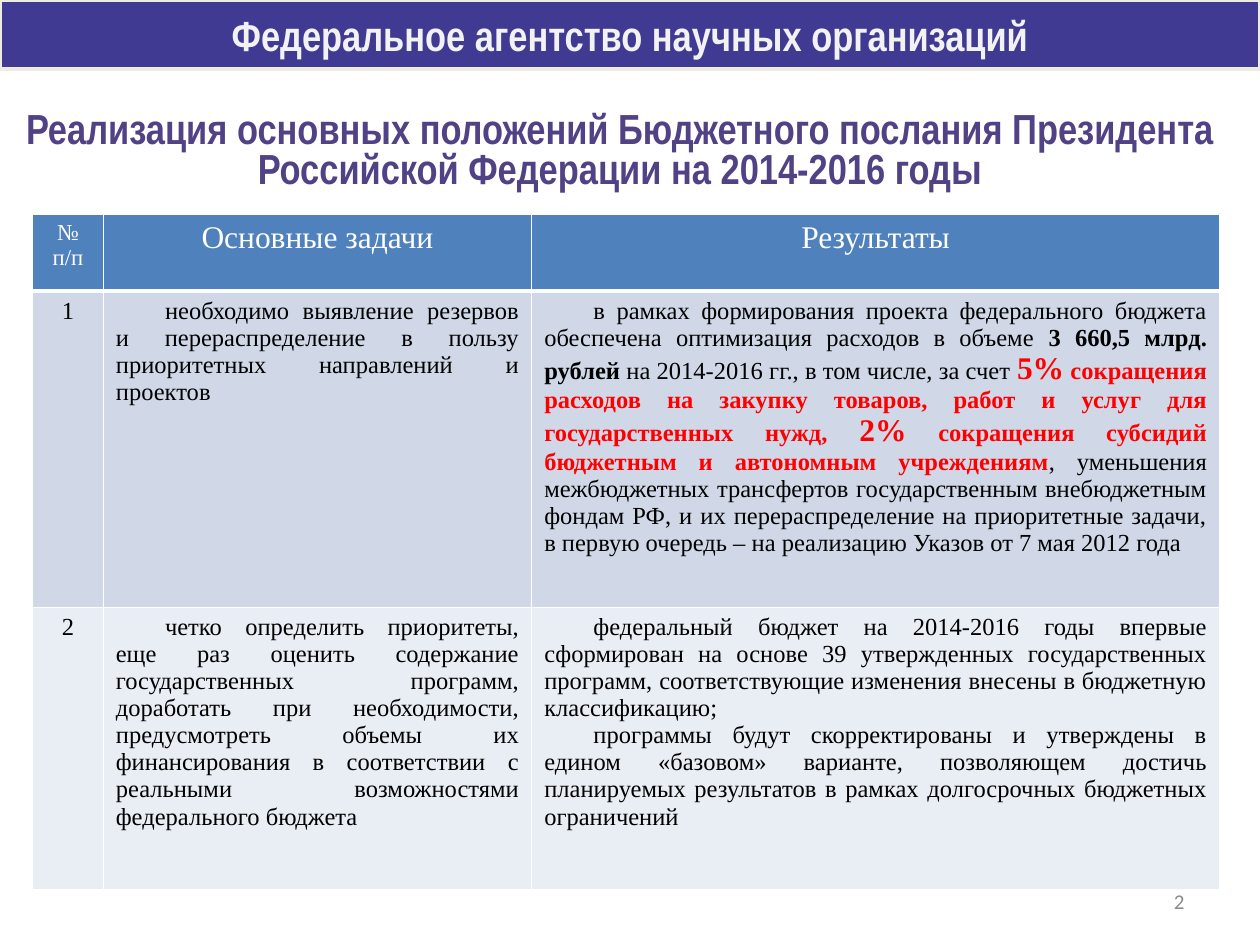
from dataclasses import dataclass
from typing import Optional

from lxml.etree import SubElement
from pptx import Presentation
from pptx.dml.color import RGBColor
from pptx.enum.shapes import MSO_SHAPE
from pptx.enum.text import MSO_ANCHOR, MSO_AUTO_SIZE, PP_ALIGN
from pptx.oxml.ns import qn
from pptx.util import Inches, Pt

SERIF = "Times New Roman"
NARROW = "Arial Narrow"


@dataclass
class Run:
    text: str
    size: float = 14
    color: str = "000000"
    bold: bool = False
    font: str = SERIF


@dataclass
class Cell:
    paragraphs: list
    align: PP_ALIGN = PP_ALIGN.JUSTIFY
    indent: float = 0.39


def rgb(value: str) -> RGBColor:
    return RGBColor.from_string(value)


def add_text(p, text: str, *, size: float, color: str, bold: bool = False,
             font: str = SERIF, align: Optional[PP_ALIGN] = None) -> None:
    r = p.add_run()
    r.text = text
    r.font.name = font
    r.font.size = Pt(size)
    r.font.bold = bold
    r.font.color.rgb = rgb(color)
    if align is not None:
        p.alignment = align


def place(sp, left: float, top: float, width: float, height: float) -> None:
    sp.left, sp.top = Inches(left), Inches(top)
    sp.width, sp.height = Inches(width), Inches(height)


def set_borders(cell, bottom: float) -> None:
    tc_pr = cell._tc.get_or_add_tcPr()
    for side, width in (("L", 1), ("R", 1), ("T", 1), ("B", bottom)):
        ln = SubElement(tc_pr, qn(f"a:ln{side}"), w=str(Pt(width)))
        fill = SubElement(ln, qn("a:solidFill"))
        SubElement(fill, qn("a:srgbClr"), val="FFFFFF")


def fill_cell(cell, content: Cell, fill: str, bottom: float) -> None:
    set_borders(cell, bottom)
    cell.fill.solid()
    cell.fill.fore_color.rgb = rgb(fill)
    tf = cell.text_frame
    for i, runs in enumerate(content.paragraphs):
        p = tf.add_paragraph() if i else tf.paragraphs[0]
        if content.indent:
            p_pr = p._p.get_or_add_pPr()
            p_pr.set("marL", "0")
            p_pr.set("indent", str(Inches(content.indent)))
        for run in runs:
            add_text(p, run.text, size=run.size, color=run.color,
                     bold=run.bold, font=run.font, align=content.align)


def centered(text: str, size: float = 14, color: str = "000000") -> Cell:
    return Cell([[Run(text, size, color)]], PP_ALIGN.CENTER, 0)


def body(*texts: str) -> Cell:
    return Cell([[Run(text)] for text in texts])


def red(text: str, size: float = 14) -> Run:
    return Run(text, size, "FF0000", True)


ROWS = [
    [centered("№ п/п", 13, "FFFFFF"),
     centered("Основные задачи", 18, "FFFFFF"),
     centered("Результаты", 18, "FFFFFF")],
    [centered("1"),
     body("необходимо выявление резервов и перераспределение в пользу "
          "приоритетных направлений и проектов"),
     Cell([[
         Run("в рамках формирования проекта федерального бюджета обеспечена "
             "оптимизация расходов в объеме "),
         Run("3 660,5 млрд. рублей ", bold=True),
         Run("на 2014-2016 гг., в том числе, за счет "),
         red("5%", 18),
         red(" сокращения расходов на закупку товаров, работ и услуг для "
             "государственных нужд, "),
         red("2%", 18),
         red(" сокращения субсидий бюджетным и автономным учреждениям"),
         Run(", уменьшения межбюджетных трансфертов государственным "
             "внебюджетным фондам РФ, и их перераспределение на приоритетные "
             "задачи, в первую очередь – на реализацию Указов от 7 мая 2012 года"),
     ]])],
    [centered("2"),
     body("четко определить приоритеты, еще раз оценить содержание "
          "государственных программ, доработать при необходимости, "
          "предусмотреть объемы их финансирования в соответствии с реальными "
          "возможностями федерального бюджета"),
     body("федеральный бюджет на 2014-2016 годы впервые сформирован на основе "
          "39 утвержденных государственных программ, соответствующие изменения "
          "внесены в бюджетную классификацию; ",
          "программы будут скорректированы и утверждены в едином «базовом» "
          "варианте, позволяющем достичь планируемых результатов в рамках "
          "долгосрочных бюджетных ограничений")],
]
ROW_FILLS = ["4F81BD", "D0D8E8", "E9EDF4"]
ROW_HEIGHTS = [0.61, 2.51, 2.24]
COL_WIDTHS = [0.56, 3.4, 5.46]


def add_banner(s) -> None:
    sp = s.shapes.add_shape(MSO_SHAPE.RECTANGLE, 0, 0, Inches(10), Inches(0.55))
    sp.shadow.inherit = False
    sp.fill.solid()
    sp.fill.fore_color.rgb = rgb("403A92")
    sp.line.color.rgb = rgb("EEECE1")
    sp.line.width = Pt(2.25)
    tf = sp.text_frame
    tf.word_wrap = False
    tf.vertical_anchor = MSO_ANCHOR.MIDDLE
    add_text(tf.paragraphs[0], "Федеральное агентство научных организаций",
             size=24, color="F2F2F2", bold=True, font=NARROW,
             align=PP_ALIGN.CENTER)


def add_title(s) -> None:
    sp = s.shapes.title
    place(sp, 0, 0.76, 9.84, 0.9)
    tf = sp.text_frame
    tf.word_wrap = True
    tf.auto_size = MSO_AUTO_SIZE.NONE
    tf.vertical_anchor = MSO_ANCHOR.MIDDLE
    p = tf.paragraphs[0]
    p.line_spacing = 0.8
    add_text(p, "Реализация основных положений Бюджетного послания Президента "
             "Российской Федерации на 2014-2016 годы", size=24, color="514185",
             bold=True, font=NARROW, align=PP_ALIGN.CENTER)


def add_tasks_table(s) -> None:
    frame = s.shapes.add_table(len(ROWS), len(COL_WIDTHS), Inches(0.26), Inches(1.7),
                               Inches(sum(COL_WIDTHS)), Inches(sum(ROW_HEIGHTS)))
    table = frame.table
    for column, width in zip(table.columns, COL_WIDTHS):
        column.width = Inches(width)
    for i, (row, height) in enumerate(zip(table.rows, ROW_HEIGHTS)):
        row.height = Inches(height)
        for cell, content in zip(row.cells, ROWS[i]):
            fill_cell(cell, content, ROW_FILLS[i], 1 if i else 3)


def add_page_number(s) -> None:
    sp = s.shapes.add_textbox(Inches(7.17), Inches(6.95), Inches(2.33), Inches(0.4))
    tf = sp.text_frame
    tf.word_wrap = True
    tf.vertical_anchor = MSO_ANCHOR.MIDDLE
    add_text(tf.paragraphs[0], "2", size=12, color="8C8C8C", font="Calibri",
             align=PP_ALIGN.RIGHT)


def main() -> None:
    prs = Presentation()
    prs.slide_width, prs.slide_height = Inches(10), Inches(7.5)
    s = prs.slides.add_slide(prs.slide_layouts[5])
    add_banner(s)
    add_tasks_table(s)
    add_title(s)
    add_page_number(s)
    prs.save("out.pptx")


if __name__ == "__main__":
    main()
